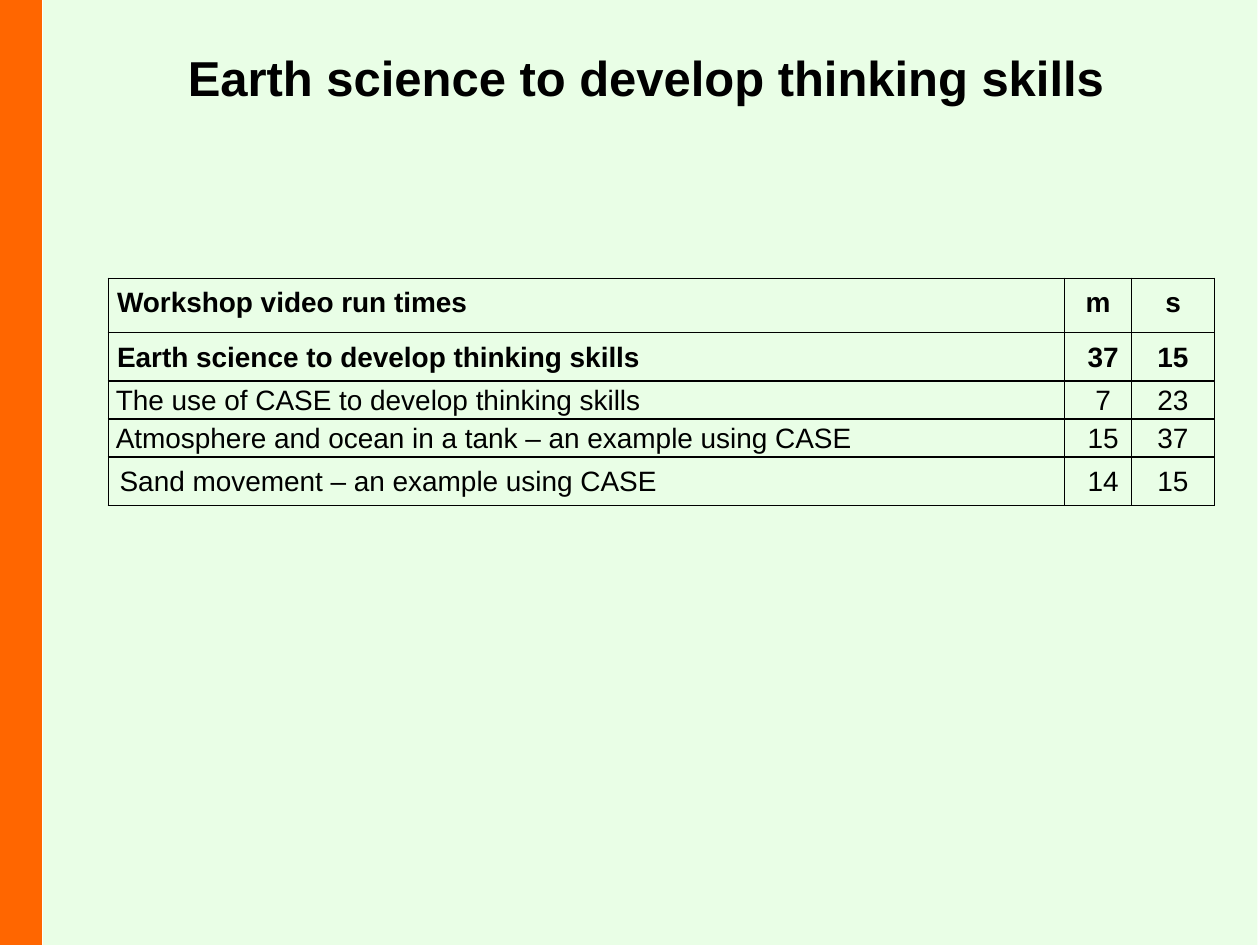
"""Build the slide of workshop video run times."""
from dataclasses import dataclass

import lxml.etree
import pptx
import pptx.dml.color
import pptx.enum.shapes
import pptx.enum.text
import pptx.oxml.ns
import pptx.util

Inches = pptx.util.Inches
Pt = pptx.util.Pt
Align = pptx.enum.text.PP_ALIGN
Anchor = pptx.enum.text.MSO_ANCHOR


@dataclass(frozen=True)
class Theme:
    font: str = "Arial"
    ink: str = "000000"
    panel: str = "E9FEE6"
    bar: str = "FF6600"
    title: int = 28
    body: int = 16


THEME = Theme()
COLS = (7.59, 0.53, 0.66)
ROWS = (
    ("Workshop video run times", "m", "s", 0.43),
    ("Earth science to develop thinking skills", "37", "15", 0.38),
    ("The use of CASE to develop thinking skills", "7", "23", 0.3),
    ("Atmosphere and ocean in a tank – an example using CASE", "15", "37", 0.3),
    ("Sand movement – an example using CASE", "14", "15", 0.38),
)
HEADS = 2
TIGHT = (2, 3)


def rgb(code):
    return pptx.dml.color.RGBColor.from_string(code)


def style(para, size, bold):
    for run in para.runs:
        run.font.name = THEME.font
        run.font.size = Pt(size)
        run.font.bold = bold
        run.font.color.rgb = rgb(THEME.ink)


def add_band(slide, order, box, color, edge=False):
    band = slide.shapes.add_shape(
        pptx.enum.shapes.MSO_SHAPE.RECTANGLE, *map(Inches, box))
    band.shadow.inherit = False
    band.fill.solid()
    band.fill.fore_color.rgb = rgb(color)
    if edge:
        band.line.color.rgb = rgb(color)
        band.line.width = Pt(0.75)
    else:
        band.line.fill.background()
    tree = slide.shapes.element
    tree.insert(2 + order, band.element)


def set_title(slide, text):
    title = slide.shapes.title
    title.left, title.top = Inches(1.39), Inches(0.33)
    title.width, title.height = Inches(7.56), Inches(0.57)
    frame = title.text_frame
    frame.text = text
    frame.word_wrap = False
    frame.auto_size = pptx.enum.text.MSO_AUTO_SIZE.SHAPE_TO_FIT_TEXT
    frame.vertical_anchor = Anchor.TOP
    para = frame.paragraphs[0]
    para.alignment = Align.LEFT
    para.space_before = Pt(0)
    style(para, THEME.title, True)


def add_edges(cell):
    name = pptx.oxml.ns.qn
    props = cell._tc.get_or_add_tcPr()
    for side in ("a:lnL", "a:lnR", "a:lnT", "a:lnB"):
        line = lxml.etree.SubElement(props, name(side), w=str(Pt(1)))
        fill = lxml.etree.SubElement(line, name("a:solidFill"))
        lxml.etree.SubElement(fill, name("a:srgbClr"), val=THEME.ink)


def inset(row, col):
    """Return the left inset of a cell in inches."""
    base = 0 if row in TIGHT else 0.07
    if col == 1 and row:
        return base + 0.08
    if col == 0 and row in TIGHT:
        return 0.06
    if col == 0 and row == len(ROWS) - 1:
        return base + 0.02
    return base


def set_cell(cell, text, row, col):
    add_edges(cell)
    cell.fill.background()
    cell.margin_left = Inches(inset(row, col))
    cell.margin_right = Inches(0 if row in TIGHT else 0.07)
    cell.margin_top = cell.margin_bottom = Inches(0 if row in TIGHT else 0.05)
    cell.vertical_anchor = Anchor.MIDDLE if row else Anchor.TOP
    cell.text_frame.text = text
    para = cell.text_frame.paragraphs[0]
    para.alignment = Align.CENTER if col else Align.LEFT
    para.line_spacing = 1.07
    para.space_after = Pt(8)
    style(para, THEME.body, row < HEADS)


def add_times(slide):
    high = sum(row[-1] for row in ROWS)
    box = (0.86, 2.21, sum(COLS), high)
    table = slide.shapes.add_table(
        len(ROWS), len(COLS), *map(Inches, box)).table
    table.first_row = table.horz_banding = False
    for col, width in enumerate(COLS):
        table.columns[col].width = Inches(width)
    for row, (*texts, height) in enumerate(ROWS):
        table.rows[row].height = Inches(height)
        for col, text in enumerate(texts):
            set_cell(table.cell(row, col), text, row, col)


def main():
    deck = pptx.Presentation()
    deck.slide_width, deck.slide_height = Inches(10), Inches(7.5)
    slide = deck.slides.add_slide(deck.slide_layouts[5])
    add_band(slide, 0, (0.34, 0, 9.64, 7.62), THEME.panel)
    add_band(slide, 1, (-0.09, 0, 0.42, 7.5), THEME.bar, edge=True)
    set_title(slide, "Earth science to develop thinking skills")
    add_times(slide)
    deck.save("out.pptx")


if __name__ == "__main__":
    main()
